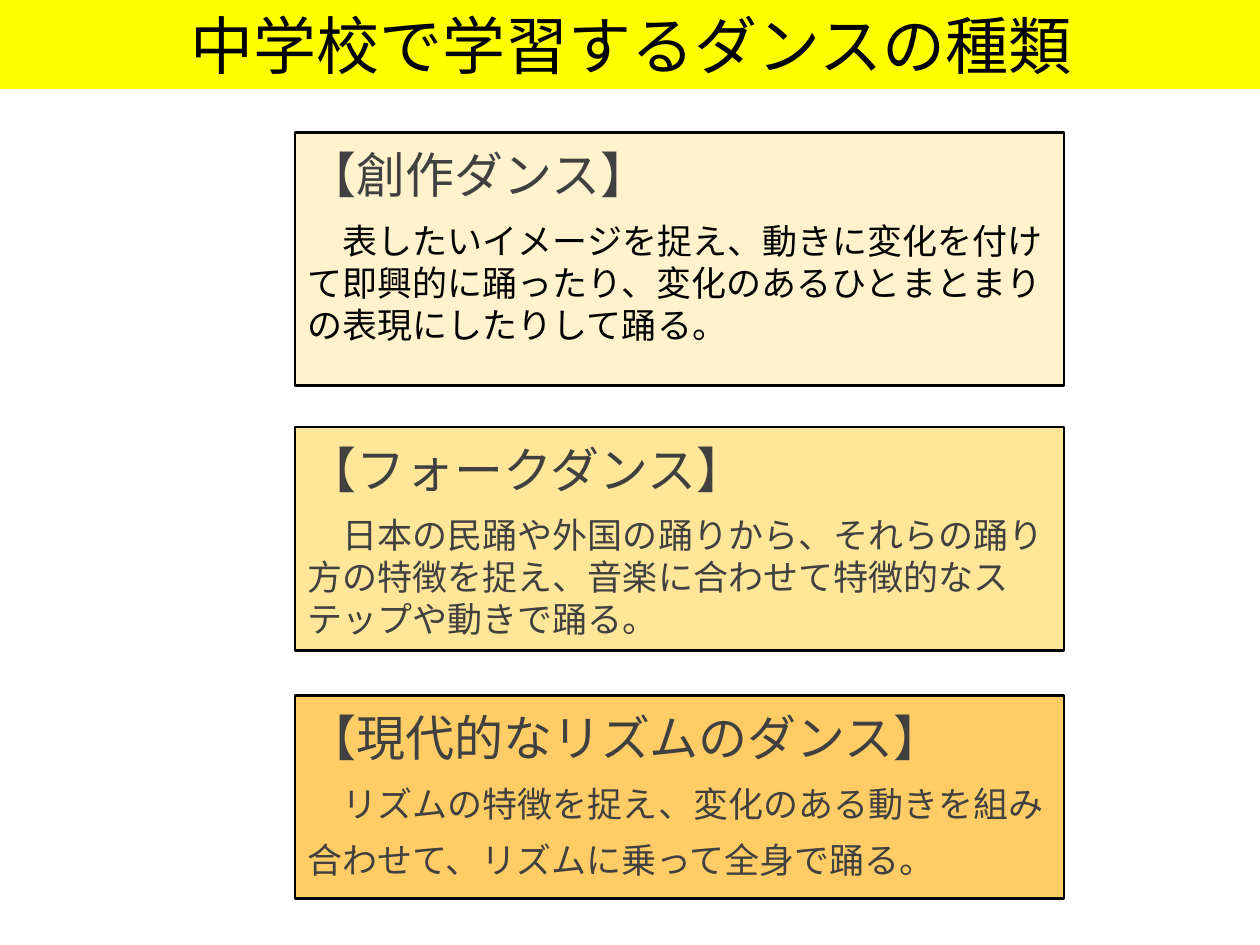
from lxml.etree import SubElement
from pptx import Presentation
from pptx.dml.color import RGBColor
from pptx.enum.shapes import MSO_SHAPE
from pptx.enum.text import MSO_ANCHOR, MSO_AUTO_SIZE, PP_ALIGN
from pptx.oxml.ns import qn
from pptx.util import Cm, Pt


def color(value):
    return RGBColor.from_string(value)


def apply(obj, values):
    for name, value in values.items():
        setattr(obj, name, value)


class Deck:
    font = "Noto Sans CJK JP"
    ink, gray = "000000", "404040"
    box_left, box_width = 5.95, 15.5

    def __init__(self, prs):
        self.s = prs.slides.add_slide(prs.slide_layouts[5])

    def place(self, sp, *box):
        apply(sp, dict(zip(("left", "top", "width", "height"), map(Cm, box))))

    def fill(self, sp, value):
        sp.fill.solid()
        sp.fill.fore_color.rgb = color(value)

    def add_text(self, p, text, size, ink, **layout):
        apply(p, layout)
        r = p.add_run()
        r.text = text
        apply(r.font, {"name": self.font, "size": Pt(size)})
        r.font.color.rgb = color(ink)
        SubElement(r.font._element, qn("a:ea"), typeface=self.font)

    def title(self, text, back):
        sp = self.s.shapes.title
        self.place(sp, 0, 0, 25.45, 1.8)
        self.fill(sp, back)
        tf = sp.text_frame
        apply(tf, {"auto_size": MSO_AUTO_SIZE.NONE, "word_wrap": False,
                   "vertical_anchor": MSO_ANCHOR.MIDDLE,
                   "margin_left": Cm(0.18), "margin_right": Cm(0.18),
                   "margin_top": Cm(0.1), "margin_bottom": Cm(0.1)})
        self.add_text(tf.paragraphs[0], text, 36, self.ink, alignment=PP_ALIGN.CENTER)

    def dance(self, top, height, back, name, text, ink, before, spacing):
        sp = self.s.shapes.add_shape(MSO_SHAPE.RECTANGLE, 0, 0, 0, 0)
        self.place(sp, self.box_left, top, self.box_width, height)
        self.fill(sp, back)
        sp.shadow.inherit = False
        sp.line.color.rgb = color(self.ink)
        sp.line.width = Pt(1.5)
        tf = sp.text_frame
        apply(tf, {"word_wrap": True, "vertical_anchor": MSO_ANCHOR.TOP})
        self.add_text(tf.paragraphs[0], name, 28, self.gray,
                      alignment=PP_ALIGN.LEFT, line_spacing=Pt(37))
        self.add_text(tf.add_paragraph(), text, 20, ink, alignment=PP_ALIGN.LEFT,
                      space_before=Pt(before), line_spacing=Pt(spacing))


def main():
    prs = Presentation()
    apply(prs, {"slide_width": Cm(25.4), "slide_height": Cm(19.05)})
    deck = Deck(prs)
    deck.title("中学校で学習するダンスの種類", "FFFF00")
    dances = [
        (2.67, 5.1, "FFF2CC", "【創作ダンス】",
         "　表したいイメージを捉え、動きに変化を付けて即興的に踊ったり、"
         "変化のあるひとまとまりの表現にしたりして踊る。", deck.ink, 9, 24),
        (8.61, 4.5, "FFE699", "【フォークダンス】",
         "　日本の民踊や外国の踊りから、それらの踊り方の特徴を捉え、"
         "音楽に合わせて特徴的なステップや動きで踊る。", deck.gray, 9, 24),
        (14.02, 4.1, "FFCC66", "【現代的なリズムのダンス】",
         "　リズムの特徴を捉え、変化のある動きを組み合わせて、"
         "リズムに乗って全身で踊る。", deck.gray, 1, 32),
    ]
    for dance in dances:
        deck.dance(*dance)
    prs.save("out.pptx")


if __name__ == "__main__":
    main()
